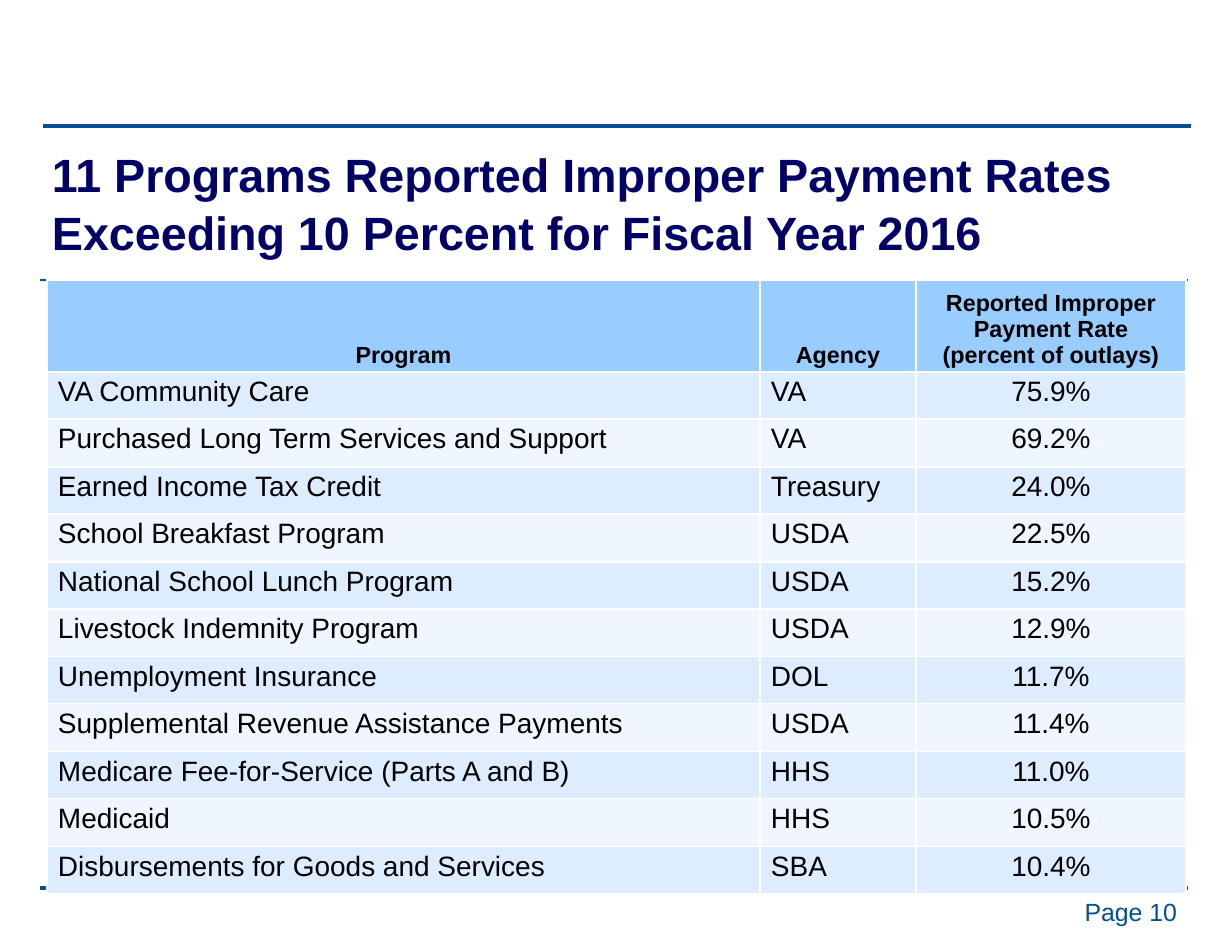
import lxml.etree
import pptx
import pptx.dml.color
import pptx.enum.shapes
import pptx.enum.text
import pptx.oxml.ns
import pptx.util

PX = 914400 // 112
FONT = "Arial"
NAVY, BLUE, BLACK, WHITE = "000066", "044F91", "000000", "FFFFFF"
HEADER_FILL = "99CCFF"
BAND_FILLS = ("DEECFF", "EFF6FF")
ALIGN = pptx.enum.text.PP_ALIGN
ANCHOR = pptx.enum.text.MSO_ANCHOR

HEADINGS = ("Program", "Agency", "Reported Improper Payment Rate (percent of outlays)")
PROGRAMS = (
    ("VA Community Care", "VA", "75.9%"),
    ("Purchased Long Term Services and Support", "VA", "69.2%"),
    ("Earned Income Tax Credit", "Treasury", "24.0%"),
    ("School Breakfast Program", "USDA", "22.5%"),
    ("National School Lunch Program", "USDA", "15.2%"),
    ("Livestock Indemnity Program", "USDA", "12.9%"),
    ("Unemployment Insurance", "DOL", "11.7%"),
    ("Supplemental Revenue Assistance Payments", "USDA", "11.4%"),
    ("Medicare Fee-for-Service (Parts A and B)", "HHS", "11.0%"),
    ("Medicaid", "HHS", "10.5%"),
    ("Disbursements for Goods and Services", "SBA", "10.4%"),
)


def px(*lengths):
    return [pptx.util.Emu(length * PX) for length in lengths]


def color(hex_string):
    return pptx.dml.color.RGBColor.from_string(hex_string)


def style(paragraph, size, ink, bold=False, align=ALIGN.LEFT):
    paragraph.alignment = align
    font = paragraph.font
    font.name, font.size, font.bold = FONT, pptx.util.Pt(size), bold
    font.color.rgb = color(ink)


def add_rule(slide, left, top, width, weight):
    rule = slide.shapes.add_connector(
        pptx.enum.shapes.MSO_CONNECTOR.STRAIGHT, *px(left, top, left + width, top))
    rule.line.color.rgb = color(BLUE)
    rule.line.width = pptx.util.Pt(weight)
    properties = rule._element.spPr
    lxml.etree.SubElement(properties, pptx.oxml.ns.qn("a:effectLst"))


def add_text(slide, box, text, size, ink, bold=False, align=ALIGN.LEFT, spacing=None):
    frame = slide.shapes.add_textbox(*px(*box)).text_frame
    frame.word_wrap = True
    frame.vertical_anchor = ANCHOR.MIDDLE
    frame.margin_left, frame.margin_right = px(12, 12)
    frame.margin_top, frame.margin_bottom = px(6, 6)
    paragraph = frame.paragraphs[0]
    paragraph.text = text
    style(paragraph, size, ink, bold, align)
    if spacing:
        paragraph.line_spacing = spacing


def add_borders(cell, sides):
    """Draws 1 pt white borders; the cell's fill has to be set afterwards."""
    properties = cell._tc.get_or_add_tcPr()
    qn = pptx.oxml.ns.qn
    for side in sides:
        border = lxml.etree.SubElement(properties, qn(f"a:ln{side}"), w="12700")
        fill = lxml.etree.SubElement(border, qn("a:solidFill"))
        lxml.etree.SubElement(fill, qn("a:srgbClr"), val=WHITE)


def fill_cell(cell, text, fill, margin, anchor, sides="LRTB"):
    add_borders(cell, sides)
    cell.fill.solid()
    cell.fill.fore_color.rgb = color(fill)
    cell.margin_left, cell.margin_right = px(margin, margin)
    cell.margin_top, cell.margin_bottom = px(4, 4)
    cell.vertical_anchor = anchor
    paragraph = cell.text_frame.paragraphs[0]
    paragraph.text = text
    return paragraph


def add_rate_table(slide, left, top, width, height):
    header_height, agency_width, rate_width = 87, 156, 270
    table = slide.shapes.add_table(
        len(PROGRAMS) + 1, len(HEADINGS), *px(left, top, width, height)).table
    widths = px(width - agency_width - rate_width, agency_width, rate_width)
    for column, column_width in zip(table.columns, widths):
        column.width = column_width
    body_height = height - header_height
    edges = [round(body_height * i / len(PROGRAMS)) for i in range(len(PROGRAMS) + 1)]
    heights = px(header_height, *(low - high for high, low in zip(edges, edges[1:])))
    for row, row_height in zip(table.rows, heights):
        row.height = row_height

    rate_column = len(HEADINGS) - 1
    for c, heading in enumerate(HEADINGS):
        sides = "LRT" if c == rate_column else "LRTB"
        paragraph = fill_cell(
            table.cell(0, c), heading, HEADER_FILL, 10, ANCHOR.BOTTOM, sides)
        style(paragraph, 15, BLACK, True, ALIGN.CENTER)
    for r, program in enumerate(PROGRAMS):
        for c, value in enumerate(program):
            sides = "LRB" if (r, c) == (0, rate_column) else "LRTB"
            paragraph = fill_cell(
                table.cell(r + 1, c), value, BAND_FILLS[r % 2], 11, ANCHOR.TOP, sides)
            style(paragraph, 18, BLACK,
                  align=ALIGN.CENTER if c == rate_column else ALIGN.LEFT)


def main():
    deck = pptx.Presentation()
    deck.slide_width, deck.slide_height = px(1232, 952)
    slide = deck.slides.add_slide(deck.slide_layouts[6])
    add_rule(slide, 43, 126, 1148, 2.5)
    add_rule(slide, 40, 888, 1148, 2.5)
    add_rule(slide, 40, 280, 1148, 1.5)
    add_text(slide, (40, 138, 1148, 127),
             "11 Programs Reported Improper Payment Rates Exceeding 10 Percent"
             " for Fiscal Year 2016", 30, NAVY, bold=True, spacing=1.05)
    add_rate_table(slide, 47, 280, 1139, 609)
    add_text(slide, (901, 890, 288, 44), "Page 10", 16, BLUE, align=ALIGN.RIGHT)
    deck.save("out.pptx")


if __name__ == "__main__":
    main()
